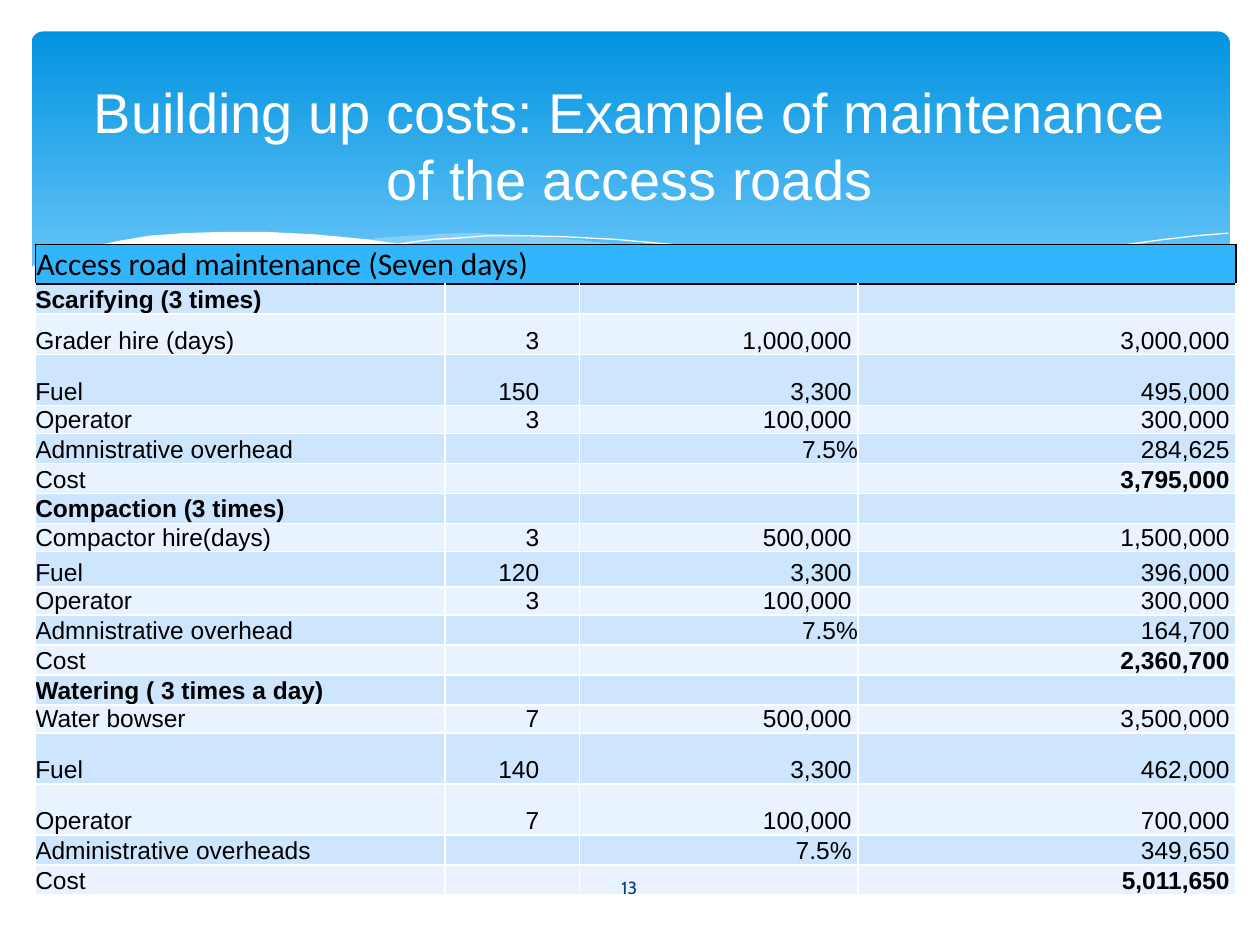
"""Build the access road maintenance cost slide."""
from lxml.etree import SubElement
from pptx import Presentation
from pptx.dml.color import RGBColor
from pptx.enum.shapes import MSO_SHAPE
from pptx.enum.text import MSO_ANCHOR, PP_ALIGN
from pptx.oxml.ns import qn
from pptx.util import Inches, Pt

COLORS = {
    "white": "FFFFFF", "black": "000000", "navy": "073E87", "sky": "0293E0",
    "pale sky": "83D3FE", "wave": "C6E7FC", "header": "31B6FD",
    "dark band": "CEE5FE", "light band": "E8F3FF",
}
PAINT = {name: RGBColor.from_string(value) for name, value in COLORS.items()}

deck = Presentation()
deck.slide_width, deck.slide_height = Inches(10), Inches(7.5)
page = deck.slides.add_slide(deck.slide_layouts[6])
UNIT = deck.slide_width // 1000


def write(para, text, size, font, color, bold=False):
    span = para.add_run()
    span.text = text
    span.font.size, span.font.name, span.font.bold = Pt(size), font, bold
    span.font.color.rgb = PAINT[color]


def draw_border(cell, side, color):
    border = SubElement(cell._tc.get_or_add_tcPr(), qn(f"a:ln{side}"), w="12700")
    if color:
        fill = SubElement(border, qn("a:solidFill"))
        SubElement(fill, qn("a:srgbClr"), val=COLORS[color])
    else:
        SubElement(border, qn("a:noFill"))


banner = page.shapes.add_shape(
    MSO_SHAPE.ROUNDED_RECTANGLE, *[UNIT * share for share in (25, 25, 951, 270)])
banner.adjustments[0] = 0.034
banner.shadow.inherit = False
banner.line.fill.background()
banner.fill.gradient()
banner.fill.gradient_angle = 270
for stop, (position, color) in zip(
        banner.fill.gradient_stops, [(0, "sky"), (0.9, "pale sky")]):
    stop.position, stop.color.rgb = position, PAINT[color]

WAVES = [
    ("wave", 29, [
        (975, 200), (948, 204), (921, 210), (891, 216), (861, 223), (805, 237),
        (753, 248), (706, 257), (661, 265), (691, 269), (732, 274), (769, 277),
        (814, 278), (854, 276), (889, 272), (921, 265), (949, 257), (976, 247),
        (976, 200)]),
    ("wave", 40, [
        (893, 273), (837, 265), (775, 254), (706, 240), (629, 222), (598, 214),
        (569, 208), (541, 203), (514, 198), (489, 194), (465, 191), (442, 189),
        (420, 187), (399, 186), (380, 185), (361, 185), (344, 186), (328, 187),
        (313, 188), (299, 189), (286, 191), (323, 196), (362, 203), (404, 211),
        (449, 222), (530, 240), (601, 255), (665, 266), (722, 274), (773, 277),
        (818, 278), (857, 277), (893, 273)]),
    ("line", 100, [
        (309, 195), (328, 192), (344, 190), (363, 189), (387, 187), (416, 187),
        (450, 188), (489, 190), (533, 194), (582, 200), (636, 208), (695, 219),
        (760, 233), (831, 251), (907, 272)]),
    ("line", 100, [
        (613, 257), (653, 246), (695, 235), (748, 223), (806, 210), (866, 199),
        (895, 194), (924, 190), (951, 187), (975, 185)]),
    ("white", 100, [
        (977, 246), (950, 256), (920, 265), (887, 271), (850, 275), (809, 277),
        (761, 275), (708, 270), (648, 262), (579, 250), (503, 233), (447, 220),
        (391, 207), (340, 197), (292, 190), (250, 186), (211, 184), (177, 184),
        (146, 185), (119, 187), (95, 191), (76, 195), (59, 199), (46, 203),
        (36, 207), (29, 210), (23, 213), (23, 329), (977, 329)]),
]
for color, opacity, points in WAVES:
    is_line = color == "line"
    builder = page.shapes.build_freeform(*points[0], scale=UNIT)
    builder.add_line_segments(points[1:], close=not is_line)
    wave = builder.convert_to_shape()
    wave.shadow.inherit = False
    if is_line:
        wave.fill.background()
        wave.line.color.rgb = PAINT["white"]
        wave.line.width = 0
        continue
    wave.line.fill.background()
    wave.fill.solid()
    wave.fill.fore_color.rgb = PAINT[color]
    if opacity < 100:
        tint = wave._element.spPr.find(qn("a:solidFill"))[0]
        SubElement(tint, qn("a:alpha"), val=str(opacity * 1000))

ROWS = [
    ("Access road maintenance (Seven days)", "", "", ""),
    ("Scarifying (3 times)", "", "", ""),
    ("Grader hire (days)", "3", "1,000,000", "3,000,000"),
    ("Fuel", "150", "3,300", "495,000"),
    ("Operator", "3", "100,000", "300,000"),
    ("Admnistrative overhead", "", "7.5%", "284,625"),
    ("Cost", "", "", "3,795,000"),
    ("Compaction (3 times)", "", "", ""),
    ("Compactor hire(days)", "3", "500,000", "1,500,000"),
    ("Fuel", "120", "3,300", "396,000"),
    ("Operator", "3", "100,000", "300,000"),
    ("Admnistrative overhead", "", "7.5%", "164,700"),
    ("Cost", "", "", "2,360,700"),
    ("Watering ( 3 times a day)", "", "", ""),
    ("Water bowser", "7", "500,000", "3,500,000"),
    ("Fuel", "140", "3,300", "462,000"),
    ("Operator", "7", "100,000", "700,000"),
    ("Administrative overheads", "", "7.5%", "349,650"),
    ("Cost", "", "", "5,011,650"),
]
COLUMN_WIDTHS = [325, 107, 221, 300]
RIGHT_MARGINS = [0, 32, 5, 5]
ROW_HEIGHT = 22.5
SPECIAL_HEIGHTS = {0: 30.5, 2: 32, 3: 40.5, 9: 28, 15: 40.5, 16: 40.5}
heights = [SPECIAL_HEIGHTS.get(row, ROW_HEIGHT) for row in range(len(ROWS))]

table = page.shapes.add_table(
    len(ROWS), len(COLUMN_WIDTHS), UNIT * 28, UNIT * 194,
    UNIT * sum(COLUMN_WIDTHS), int(UNIT * sum(heights))).table
for column, width in zip(table.columns, COLUMN_WIDTHS):
    column.width = UNIT * width
for row, height in zip(table.rows, heights):
    row.height = int(UNIT * height)

for row, values in enumerate(ROWS):
    is_header = row == 0
    is_section = not any(values[1:])
    band = "header" if is_header else "dark band" if row % 2 else "light band"
    for column, value in enumerate(values):
        cell = table.cell(row, column)
        tight = value == "7.5%" and values[0] == "Admnistrative overhead"
        cell.margin_left = cell.margin_top = UNIT if is_header else 0
        cell.margin_bottom = 0
        cell.margin_right = 0 if tight else UNIT * RIGHT_MARGINS[column]
        cell.vertical_anchor = MSO_ANCHOR.BOTTOM
        edges = {side: "white" for side in "LRTB"}
        if is_header:
            edges = {"L": "black" if column == 0 else None,
                     "R": "black" if column == 3 else None,
                     "T": "black", "B": "black"}
        elif row == 1:
            edges["T"] = "black"
        for side, color in edges.items():
            draw_border(cell, side, color)
        cell.fill.solid()
        cell.fill.fore_color.rgb = PAINT[band]
        para = cell.text_frame.paragraphs[0]
        para.alignment = PP_ALIGN.RIGHT if column else PP_ALIGN.LEFT
        if value:
            bold = not is_header and (
                is_section or (values[0] == "Cost" and column == 3))
            write(para, value, 18 if is_header else 14,
                  "Calibri" if is_header else "Arial", "black", bold)
        else:
            para._p.get_or_add_endParaRPr().set("sz", "1400")
table.cell(0, 0).merge(table.cell(0, 1))

LABELS = [
    ((436, 684, 127, 40), "13", 10, "Cabin", "navy"),
    ((50, 52, 900, 126),
     "Building up costs: Example of maintenance of the access roads",
     32, "Arial", "white"),
]
for place, text, size, font, color in LABELS:
    box = page.shapes.add_textbox(*[UNIT * share for share in place])
    box.text_frame.word_wrap = True
    box.text_frame.vertical_anchor = MSO_ANCHOR.MIDDLE
    para = box.text_frame.paragraphs[0]
    para.alignment = PP_ALIGN.CENTER
    write(para, text, size, font, color)

deck.save("out.pptx")
